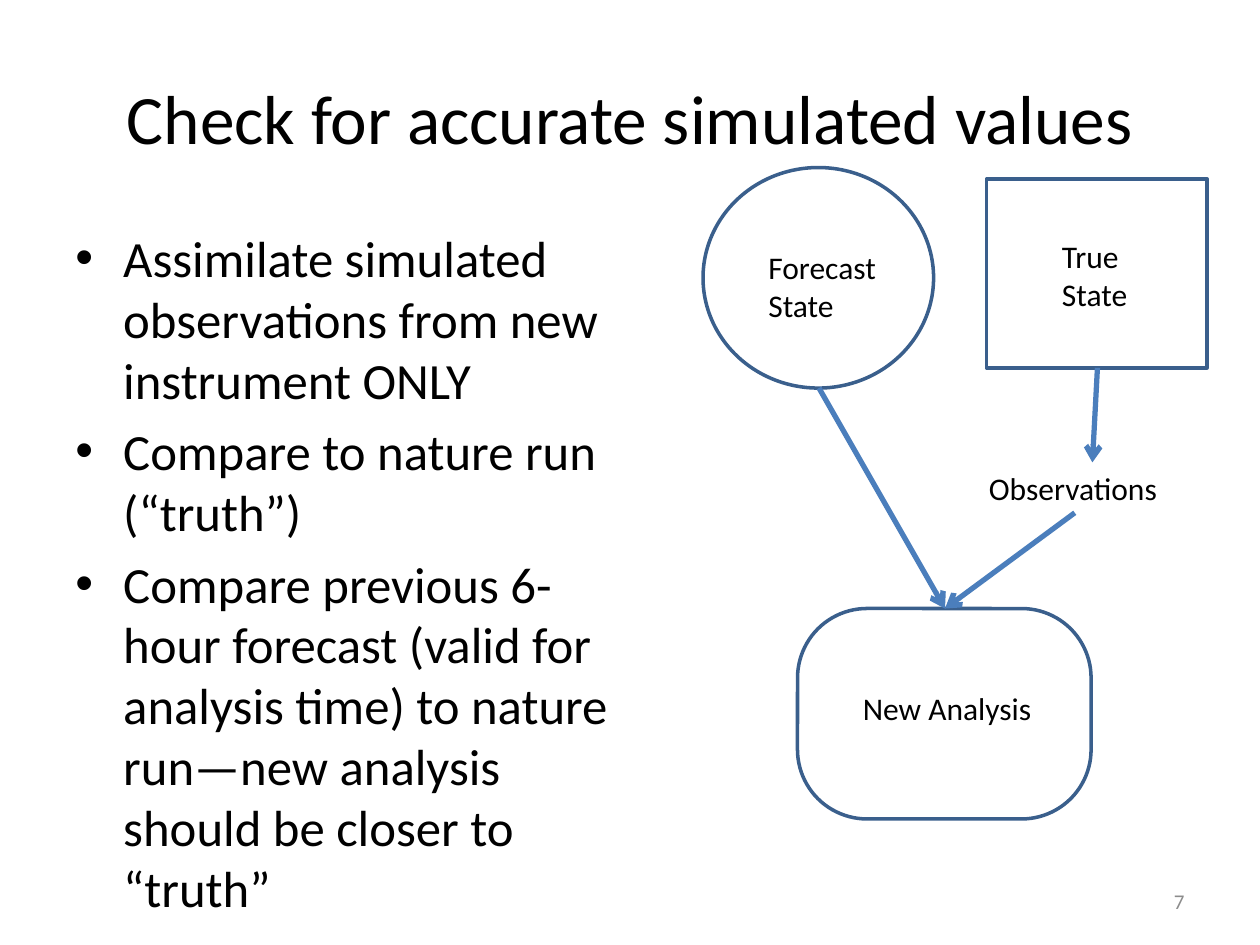
import pptx
import pptx.util
import pptx.dml.color
import pptx.enum.shapes
import pptx.enum.text
from dataclasses import dataclass
from lxml import etree
from pptx.oxml.ns import qn

Inches, Pt = pptx.util.Inches, pptx.util.Pt
SHAPE = pptx.enum.shapes.MSO_SHAPE
ALIGN = pptx.enum.text.PP_ALIGN
ANCHOR = pptx.enum.text.MSO_ANCHOR


@dataclass(frozen=True)
class Theme:
    font: str = "Calibri"
    ink: str = "000000"
    muted: str = "8C8C8C"
    outline: str = "3A5F8C"
    arrow: str = "4B7EBC"
    title_size: float = 39.6
    body_size: float = 29
    label_size: float = 18
    number_size: float = 12
    outline_width: float = 2
    arrow_width: float = 3


def rgb(value):
    return pptx.dml.color.RGBColor.from_string(value)


def write_text(frame, text, *, font, size, color, align=ALIGN.LEFT,
               anchor=ANCHOR.TOP, wrap=True, bullet=None, indent=0.38, space=6):
    """Fill a text frame, one paragraph for each line of text."""
    frame.word_wrap = wrap
    frame.vertical_anchor = anchor
    for index, line in enumerate(text.split("\n")):
        paragraph = frame.paragraphs[0] if index == 0 else frame.add_paragraph()
        paragraph.alignment = align
        run = paragraph.add_run()
        run.text = line
        run.font.name = font
        run.font.size = Pt(size)
        run.font.color.rgb = rgb(color)
        if bullet:
            paragraph.space_before = Pt(space)
            properties = paragraph._p.get_or_add_pPr()
            properties.set("marL", str(Inches(indent)))
            properties.set("indent", str(-Inches(indent)))
            etree.SubElement(properties, qn("a:buFont")).set("typeface", "Arial")
            etree.SubElement(properties, qn("a:buChar")).set("char", bullet)


class SlideBuilder:
    def __init__(self, slide, theme):
        self.slide = slide
        self.theme = theme

    def text(self, box, text, size, color=None, **style):
        textbox = self.slide.shapes.add_textbox(*map(Inches, box))
        write_text(textbox.text_frame, text, font=self.theme.font, size=size,
                   color=color or self.theme.ink, **style)

    def label(self, box, text, wrap=False):
        self.text(box, text, self.theme.label_size, wrap=wrap)

    def outline(self, kind, box, corner=None):
        node = self.slide.shapes.add_shape(kind, *map(Inches, box))
        node.shadow.inherit = False
        node.fill.background()
        node.line.color.rgb = rgb(self.theme.outline)
        node.line.width = Pt(self.theme.outline_width)
        if corner is not None:
            node.adjustments[0] = corner

    def arrow(self, start, end):
        connector = self.slide.shapes.add_connector(
            pptx.enum.shapes.MSO_CONNECTOR.STRAIGHT, *map(Inches, start + end))
        connector.line.color.rgb = rgb(self.theme.arrow)
        connector.line.width = Pt(self.theme.arrow_width)
        line = connector.line._get_or_add_ln()
        etree.SubElement(line, qn("a:tailEnd")).set("type", "arrow")
        etree.SubElement(connector._element.spPr, qn("a:effectLst"))


def main():
    deck = pptx.Presentation()
    deck.slide_width, deck.slide_height = Inches(10), Inches(7.5)
    theme = Theme()
    builder = SlideBuilder(deck.slides.add_slide(deck.slide_layouts[6]), theme)

    # Title and checklist
    builder.text((0.5, 0.3, 9, 1.25), "Check for accurate simulated values",
                 theme.title_size, align=ALIGN.CENTER, anchor=ANCHOR.MIDDLE)
    checks = (
        "Assimilate simulated observations from new instrument ONLY",
        "Compare to nature run (“truth”)",
        "Compare previous 6-hour forecast (valid for analysis time) to "
        "nature run—new analysis should be closer to “truth”",
    )
    builder.text((0.5, 1.75, 4.5, 4.95), "\n".join(checks), theme.body_size,
                 bullet="•")

    # States and the analysis they lead to
    builder.outline(SHAPE.OVAL, (5.58, 1.33, 1.83, 1.75))
    builder.label((6, 1.92, 1.67, 0.71), "Forecast\nState", wrap=True)
    builder.outline(SHAPE.RECTANGLE, (7.83, 1.42, 1.75, 1.5))
    builder.label((8.33, 1.83, 0.72, 0.71), "True\nState")
    builder.outline(SHAPE.ROUNDED_RECTANGLE, (6.33, 4.83, 2.33, 1.67), corner=0.33)
    builder.label((7.75, 3.67, 1.55, 0.4), "Observations")
    builder.label((6.75, 5.42, 1.55, 0.4), "New Analysis")

    # Flow
    analysis_top = (7.5, 4.83)
    builder.arrow((8.71, 2.92), (8.67, 3.67))
    builder.arrow((8.53, 4.07), analysis_top)
    builder.arrow((6.5, 3.08), analysis_top)

    # Slide number
    builder.text((7.17, 6.95, 2.33, 0.4), "7", theme.number_size, theme.muted,
                 align=ALIGN.RIGHT, anchor=ANCHOR.MIDDLE)

    deck.save("out.pptx")


if __name__ == "__main__":
    main()
